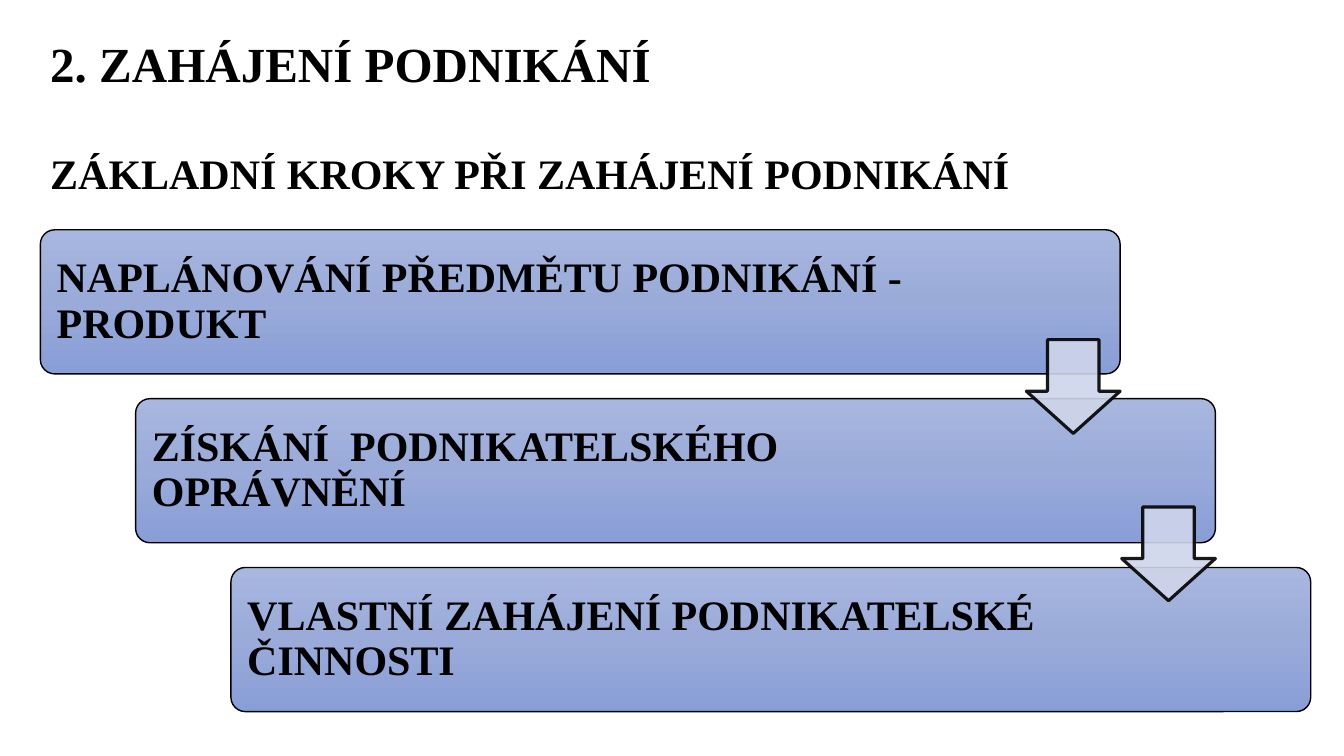
import copy
from dataclasses import dataclass

import pptx
import pptx.dml.color
import pptx.enum.dml
import pptx.enum.shapes
import pptx.enum.text
import pptx.oxml.ns
import pptx.util
from pptx.util import Inches

FONT = "Times New Roman"
BLACK = "000000"
STEP_GRADIENT = {0: "A8B7DF", 0.5: "9AABD9", 1: "889ED7"}
ARROW_COLOR = "CFD5EA"
ARROW_OPACITY = 90000
STEP_SHIFT = 0.945
STEP_PITCH = 1.675
ARROW_PITCH = 1.66
HEADING_FORMAT = {"word_wrap": True, "auto_size": pptx.enum.text.MSO_AUTO_SIZE.SHAPE_TO_FIT_TEXT}


@dataclass
class Step:
    text: str
    right_margin: float


STEPS = [
    Step("NAPLÁNOVÁNÍ PŘEDMĚTU PODNIKÁNÍ - PRODUKT", 1.59),
    Step("ZÍSKÁNÍ  PODNIKATELSKÉHO OPRÁVNĚNÍ", 2),
    Step("VLASTNÍ ZAHÁJENÍ PODNIKATELSKÉ ČINNOSTI", 2),
]


def rgb(value: str) -> pptx.dml.color.RGBColor:
    return pptx.dml.color.RGBColor.from_string(value)


def apply_format(target, values: dict) -> None:
    for name, value in values.items():
        setattr(target, name, value)


def write(paragraph, text: str, size: float) -> None:
    run = paragraph.add_run()
    run.text = text
    apply_format(run.font, {"name": FONT, "size": pptx.util.Pt(size), "bold": True})
    run.font.color.rgb = rgb(BLACK)


def set_opacity(color_fill, opacity: int) -> None:
    for color in color_fill.iter(pptx.oxml.ns.qn("a:srgbClr")):
        alpha = color.makeelement(pptx.oxml.ns.qn("a:alpha"), {"val": str(opacity)})
        color.append(alpha)


def fill_gradient(shape) -> None:
    shape.fill.gradient()
    shape.fill.gradient_angle = 270
    stop_list = shape._element.spPr.find(".//" + pptx.oxml.ns.qn("a:gsLst"))
    stop_list.insert(1, copy.deepcopy(stop_list[0]))
    for stop, (position, color) in zip(shape.fill.gradient_stops, STEP_GRADIENT.items()):
        stop.position = position
        stop.color.rgb = rgb(color)


def outline(shape, width: float) -> None:
    shape.shadow.inherit = False
    shape.line.color.rgb = rgb(BLACK)
    shape.line.width = pptx.util.Pt(width)


def draw_headings(slide) -> None:
    headings = slide.shapes.add_textbox(Inches(0.4), Inches(0.28), Inches(12.47), Inches(1.78))
    frame = headings.text_frame
    apply_format(frame, HEADING_FORMAT)
    write(frame.paragraphs[0], "2. ZAHÁJENÍ PODNIKÁNÍ", 35)
    subtitle = frame.add_paragraph()
    subtitle.space_before = pptx.util.Pt(40)
    write(subtitle, "ZÁKLADNÍ KROKY PŘI ZAHÁJENÍ PODNIKÁNÍ", 30)


def draw_step(slide, index: int, step: Step) -> None:
    box = slide.shapes.add_shape(
        pptx.enum.shapes.MSO_SHAPE.ROUNDED_RECTANGLE,
        Inches(0.4 + index * STEP_SHIFT), Inches(2.28 + index * STEP_PITCH),
        Inches(10.71), Inches(1.43),
    )
    box.adjustments[0] = 0.1
    fill_gradient(box)
    outline(box, 1)
    apply_format(box.text_frame, {
        "word_wrap": True,
        "vertical_anchor": pptx.enum.text.MSO_ANCHOR.MIDDLE,
        "margin_left": Inches(0.12),
        "margin_top": Inches(0.12),
        "margin_right": Inches(step.right_margin),
        "margin_bottom": Inches(0.12),
    })
    paragraph = box.text_frame.paragraphs[0]
    apply_format(paragraph, {"alignment": pptx.enum.text.PP_ALIGN.LEFT, "line_spacing": 0.9})
    write(paragraph, step.text, 30)


def draw_arrow(slide, index: int) -> None:
    arrow = slide.shapes.add_shape(
        pptx.enum.shapes.MSO_SHAPE.DOWN_ARROW,
        Inches(10.18 + index * STEP_SHIFT), Inches(3.37 + index * ARROW_PITCH),
        Inches(0.93), Inches(0.93),
    )
    arrow.adjustments[0] = 0.55
    arrow.adjustments[1] = 0.45
    arrow.fill.solid()
    arrow.fill.fore_color.rgb = rgb(ARROW_COLOR)
    outline(arrow, 2.25)
    arrow.line.dash_style = pptx.enum.dml.MSO_LINE.SOLID
    set_opacity(arrow._element.spPr, ARROW_OPACITY)


def main() -> None:
    presentation = pptx.Presentation()
    apply_format(presentation, {"slide_width": Inches(13.33), "slide_height": Inches(7.5)})
    slide = presentation.slides.add_slide(presentation.slide_layouts[6])
    draw_headings(slide)
    for index, step in enumerate(STEPS):
        draw_step(slide, index, step)
    for index in range(len(STEPS) - 1):
        draw_arrow(slide, index)
    presentation.save("out.pptx")


if __name__ == "__main__":
    main()
